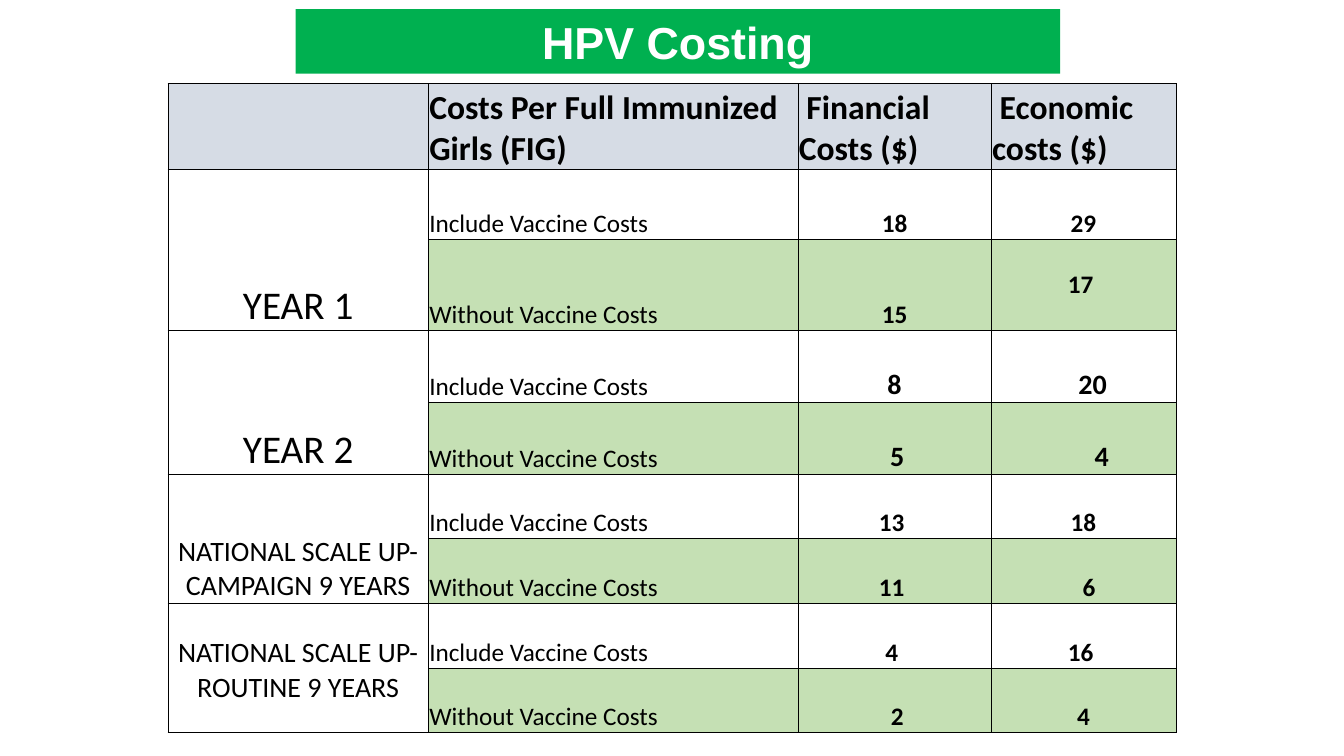
from dataclasses import dataclass

from lxml.etree import SubElement
from pptx import Presentation
from pptx.dml.color import RGBColor as RGB
from pptx.enum.text import MSO_ANCHOR as Anchor, PP_ALIGN as Align
from pptx.oxml import parse_xml
from pptx.oxml.ns import nsdecls, qn
from pptx.util import Pt


@dataclass(frozen=True)
class Theme:
    ink: str = "000000"
    paper: str = "FFFFFF"
    banner: str = "00B050"
    head: str = "D6DCE5"
    band: str = "C5E0B4"
    title: int = 32
    label: int = 24
    year: int = 28
    mid: int = 20
    small: int = 18


theme = Theme()


def style(para, size, bold, align, color=theme.ink, font="Calibri"):
    para.alignment = align
    for run in para.runs:
        run.font.name = font
        run.font.size = Pt(size)
        run.font.bold = bold
        run.font.color.rgb = RGB.from_string(color)


def put(cell, text, size, bold=False, align=Align.LEFT, shift=0, lift=0):
    """Write bottom-aligned text, nudged sideways by shift and up by lift."""
    cell.text_frame.text = text
    cell.vertical_anchor = Anchor.BOTTOM
    cell.margin_left = Pt(0.7 + max(shift, 0))
    cell.margin_right = Pt(0.7 + max(-shift, 0))
    cell.margin_top = Pt(0.7)
    cell.margin_bottom = Pt(lift)
    style(cell.text_frame.paragraphs[0], size, bold, align)


# Content: group label, size, lift, then two rows of
# (size, financial, shift, economic, shift, lift)
heads = ["Costs Per Full Immunized Girls (FIG)",
         " Financial Costs ($)", " Economic costs ($)"]
kinds = ["Include Vaccine Costs", "Without Vaccine Costs"]
groups = [
    ("YEAR 1", theme.year, 0,
     [(theme.small, "18", 0, "29", 0, 0),
      (theme.small, "15", 0, "17", -4, 21)]),
    ("YEAR 2", theme.year, 0,
     [(theme.mid, "8", 0, "20", 13, 0),
      (theme.mid, "5", 4, "4", 26, 0)]),
    ("NATIONAL SCALE UP-CAMPAIGN 9 YEARS", theme.mid, 0,
     [(theme.small, "13", -4, "18", 0, 0),
      (theme.small, "11", -4, "6", 8, 0)]),
    ("NATIONAL SCALE UP- ROUTINE 9 YEARS", theme.mid, 20,
     [(theme.small, "4", -4, "16", -4, 0),
      (theme.small, "2", 4, "4", 0, 0)]),
]
widths = [186, 264, 138, 132]
heights = [61.2, 50, 65, 51.4, 51.4] + [46.2] * 4

# Slide
deck = Presentation()
deck.slide_width, deck.slide_height = Pt(960), Pt(540)
slide = deck.slides.add_slide(deck.slide_layouts[5])

# Title banner
title = slide.shapes.title
title.left, title.top, title.width, title.height = (
    Pt(211.2), Pt(6.6), Pt(546), Pt(46))
title.fill.solid()
title.fill.fore_color.rgb = RGB.from_string(theme.banner)
title.text_frame.text = "HPV Costing"
title.text_frame.vertical_anchor = Anchor.MIDDLE
style(title.text_frame.paragraphs[0], theme.title, True, Align.CENTER,
      theme.paper, "Arial")

# Table grid
table = slide.shapes.add_table(
    len(heights), len(widths), Pt(120), Pt(59.6),
    Pt(sum(widths)), Pt(sum(heights))).table
table.first_row = table.horz_banding = False
for col, width in zip(table.columns, widths):
    col.width = Pt(width)
for row, height in zip(table.rows, heights):
    row.height = Pt(height)

# Header row
for c, text in enumerate(heads, 1):
    put(table.cell(0, c), text, theme.label, True)

# Body rows
for g, (name, size, lift, rows) in enumerate(groups):
    top = 1 + 2 * g
    table.cell(top, 0).merge(table.cell(top + 1, 0))
    put(table.cell(top, 0), name, size, align=Align.CENTER, lift=lift)
    for r, (kind, data) in enumerate(zip(kinds, rows), top):
        size, fin, left, eco, right, rise = data
        put(table.cell(r, 1), kind, theme.small)
        put(table.cell(r, 2), fin, size, True, Align.CENTER, left)
        put(table.cell(r, 3), eco, size, True, Align.CENTER, right, rise)

# Fills and borders
for r in range(len(heights)):
    for c in range(len(widths)):
        cell = table.cell(r, c)
        if r == 0 or (c > 0 and r % 2 == 0):
            cell.fill.solid()
            cell.fill.fore_color.rgb = RGB.from_string(
                theme.band if r else theme.head)
        else:
            cell.fill.background()
        props = cell._tc.get_or_add_tcPr()
        for i, side in enumerate("LRTB"):
            line = parse_xml(f'<a:ln{side} {nsdecls("a")} w="{Pt(0.5)}"/>')
            solid = SubElement(line, qn("a:solidFill"))
            SubElement(solid, qn("a:srgbClr"), val=theme.ink)
            props.insert(i, line)

deck.save("out.pptx")
